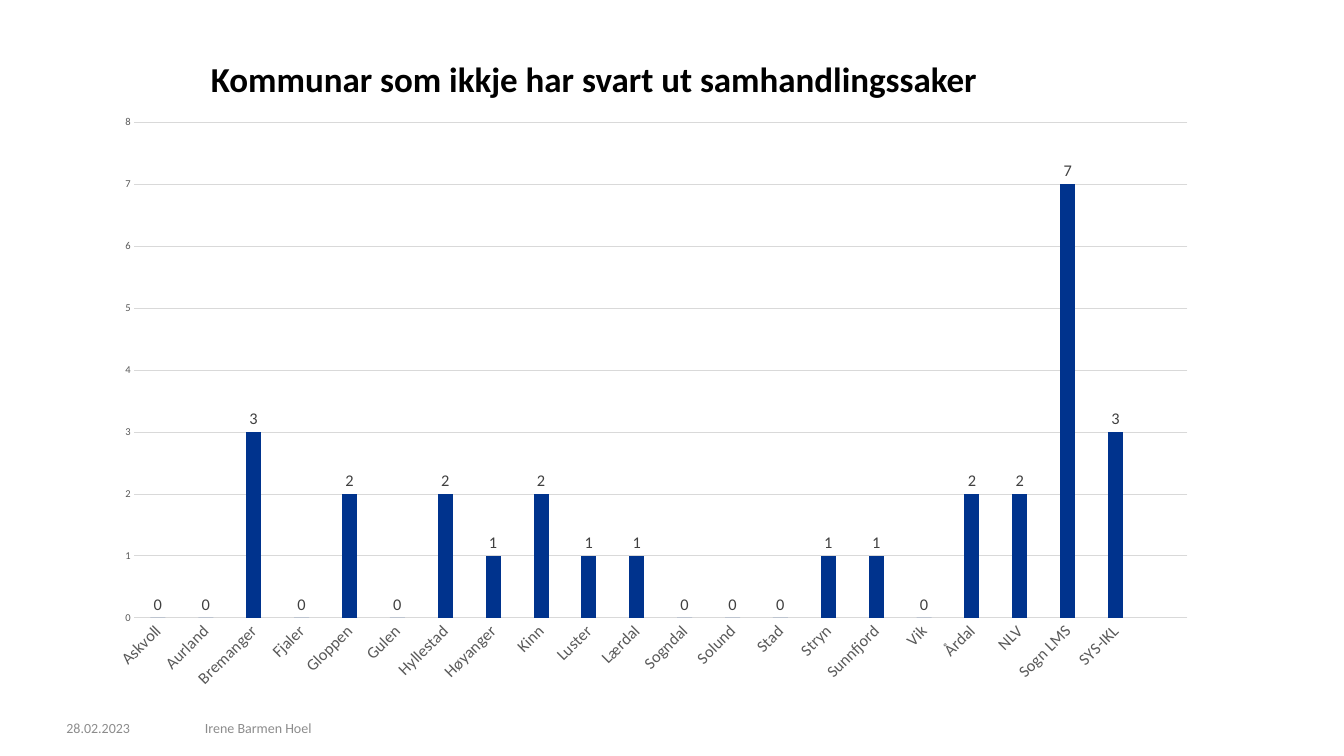
import pptx
import pptx.chart.data
import pptx.dml.color
import pptx.enum.chart
import pptx.enum.text
import pptx.oxml
import pptx.oxml.ns
import pptx.util

Inches, Pt = pptx.util.Inches, pptx.util.Pt
LEFT_MARGIN = 0.79
FOOTER_TOP = 8.54
AXIS_GREY = "595959"
LINE_GREY = "D9D9D9"


def color(hex_text):
    return pptx.dml.color.RGBColor.from_string(hex_text)


def add_text(text, left, top, width, height, size=12, fill="8C8C8C", bold=False,
             align=pptx.enum.text.PP_ALIGN.LEFT,
             anchor=pptx.enum.text.MSO_ANCHOR.MIDDLE, line_spacing=None):
    shape = slide.shapes.add_textbox(Inches(left), Inches(top), Inches(width), Inches(height))
    frame = shape.text_frame
    frame.word_wrap = True
    frame.margin_left = frame.margin_right = frame.margin_top = frame.margin_bottom = 0
    frame.vertical_anchor = anchor
    paragraph = frame.paragraphs[0]
    paragraph.text = text
    paragraph.alignment = align
    paragraph.line_spacing = line_spacing
    font = paragraph.runs[0].font
    font.name, font.size, font.bold = "Calibri", Pt(size), bold
    font.color.rgb = color(fill)


presentation = pptx.Presentation()
presentation.slide_width, presentation.slide_height = Inches(16), Inches(9)
slide = presentation.slides.add_slide(presentation.slide_layouts[6])

# Footer and title
add_text("28.02.2023", LEFT_MARGIN, FOOTER_TOP, 1.26, 0.24)
add_text("Irene Barmen Hoel", 2.44, FOOTER_TOP, 9.77, 0.24)
add_text("Kommunar som ikkje har svart ut samhandlingssaker", LEFT_MARGIN, 0.74, 12.57, 0.55,
         size=30, fill="000000", bold=True, align=pptx.enum.text.PP_ALIGN.CENTER,
         anchor=pptx.enum.text.MSO_ANCHOR.TOP, line_spacing=Pt(32))

# Chart data: the last category is an empty slot
unanswered = {
    "Askvoll": 0, "Aurland": 0, "Bremanger": 3, "Fjaler": 0, "Gloppen": 2, "Gulen": 0,
    "Hyllestad": 2, "Høyanger": 1, "Kinn": 2, "Luster": 1, "Lærdal": 1, "Sogndal": 0,
    "Solund": 0, "Stad": 0, "Stryn": 1, "Sunnfjord": 1, "Vik": 0, "Årdal": 2,
    "NLV": 2, "Sogn LMS": 7, "SYS-IKL": 3, "": None,
}
chart_data = pptx.chart.data.CategoryChartData()
chart_data.categories = list(unanswered)
chart_data.add_series("Series 1", list(unanswered.values()))

# Column chart
chart = slide.shapes.add_chart(
    pptx.enum.chart.XL_CHART_TYPE.COLUMN_CLUSTERED,
    Inches(1.31), Inches(1.3), Inches(12.97), Inches(7.06), chart_data).chart
chart.has_title = False
chart.has_legend = False
chart.font.name, chart.font.size = "Calibri", Pt(10)
chart.font.color.rgb = color("000000")
plot = chart.plots[0]
plot.vary_by_categories = False
plot.gap_width, plot.overlap = 219, -27
series = plot.series[0]
series.format.fill.solid()
series.format.fill.fore_color.rgb = color("00338D")

# Axes
category_axis, value_axis = chart.category_axis, chart.value_axis
value_axis.minimum_scale, value_axis.maximum_scale, value_axis.major_unit = 0, 8, 1
value_axis.has_major_gridlines = True
value_axis.format.line.fill.background()
for axis in (category_axis, value_axis):
    axis.major_tick_mark = axis.minor_tick_mark = pptx.enum.chart.XL_TICK_MARK.NONE
for line in (category_axis.format.line, value_axis.major_gridlines.format.line):
    line.width = Pt(0.75)
    line.color.rgb = color(LINE_GREY)

# Data labels and axis labels
labels = series.data_labels
labels.show_value = True
labels.position = pptx.enum.chart.XL_LABEL_POSITION.OUTSIDE_END
for font, size, fill in ((labels.font, 14, "404040"),
                         (category_axis.tick_labels.font, 14, AXIS_GREY),
                         (value_axis.tick_labels.font, 9, AXIS_GREY)):
    font.name, font.size = "Calibri", Pt(size)
    font.color.rgb = color(fill)

# Slanted category labels and a fixed plot area
chart_space = chart._chartSpace
chart_space.xpath(".//c:catAx/c:txPr/a:bodyPr")[0].set("rot", "-2700000")
plot_area = chart_space.xpath(".//c:plotArea")[0]
for layout in plot_area.xpath("c:layout"):
    plot_area.remove(layout)
settings = (("layoutTarget", "inner"), ("xMode", "edge"), ("yMode", "edge"),
            ("x", 0.022), ("y", 0.022), ("w", 0.967), ("h", 0.836))
layout_items = "".join(f'<c:{name} val="{value}"/>' for name, value in settings)
plot_area.insert(0, pptx.oxml.parse_xml(
    f'<c:layout {pptx.oxml.ns.nsdecls("c")}>'
    f'<c:manualLayout>{layout_items}</c:manualLayout></c:layout>'))

presentation.save("out.pptx")
